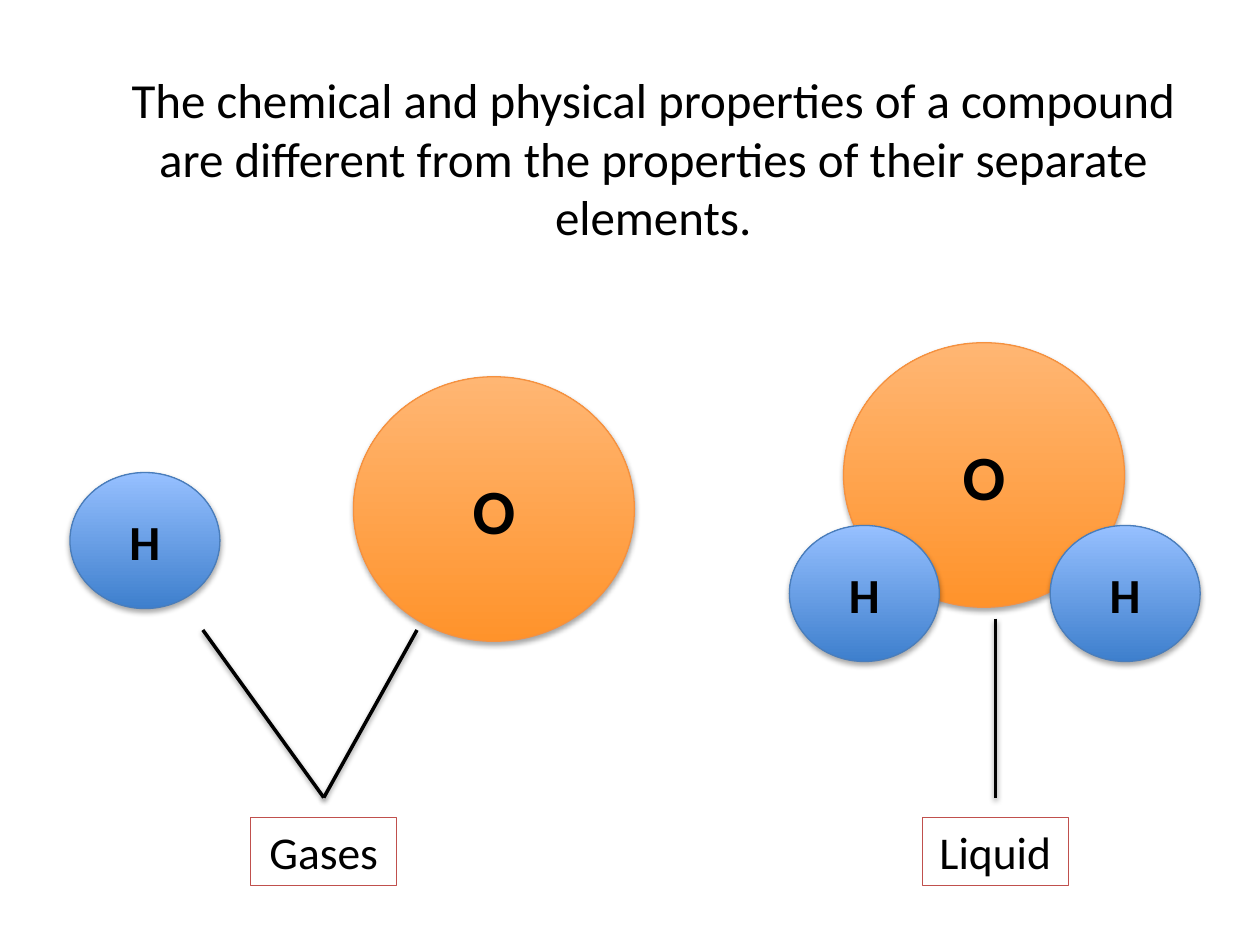
from dataclasses import dataclass

from pptx import Presentation
from pptx import util as u
from pptx.dml.color import RGBColor
from pptx.enum import shapes, text
from pptx.oxml import parse_xml
from pptx.oxml.ns import nsdecls


@dataclass(frozen=True)
class Theme:
    font: str = "Calibri"
    ink: str = "000000"
    frame: str = "C0504D"
    title_size: int = 28
    label_size: int = 26
    thin: float = 0.75
    thick: float = 2


@dataclass(frozen=True)
class Atom:
    symbol: str
    width: float
    height: float
    size: int
    bottom: str
    top: str
    edge: str


HYDROGEN = Atom("H", 11.9, 10.8, 28, "3E7FCD", "96C0FF", "4A7DBA")
OXYGEN = Atom("O", 22.3, 21, 36, "FF932B", "FFB673", "F5913F")


class Deck:
    COLS = 100
    ROWS = 75

    def __init__(self, theme):
        self.theme = theme
        self.prs = Presentation()
        self.prs.slide_width, self.prs.slide_height = u.Inches(10), u.Inches(7.5)
        self.s = self.prs.slides.add_slide(self.prs.slide_layouts[5])

    def x(self, cols):
        return u.Emu(int(self.prs.slide_width * cols / self.COLS))

    def y(self, rows):
        return u.Emu(int(self.prs.slide_height * rows / self.ROWS))

    def box(self, left, top, width, height):
        return self.x(left), self.y(top), self.x(width), self.y(height)

    def set_text(self, sp, words, size, bold=False, anchor=text.MSO_ANCHOR.MIDDLE):
        tf = sp.text_frame
        frame = {"word_wrap": True, "auto_size": text.MSO_AUTO_SIZE.NONE,
                 "vertical_anchor": anchor}
        for name, value in frame.items():
            setattr(tf, name, value)
        p = tf.paragraphs[0]
        p.alignment = text.PP_ALIGN.CENTER
        r = p.add_run()
        r.text = words
        style = {"name": self.theme.font, "size": u.Pt(size), "bold": bold}
        for name, value in style.items():
            setattr(r.font, name, value)
        r.font.color.rgb = RGBColor.from_string(self.theme.ink)

    def outline(self, sp, color, width):
        sp.line.color.rgb = RGBColor.from_string(color)
        sp.line.width = u.Pt(width)

    def shadow(self, sp, opacity, distance):
        sp._element.spPr.append(parse_xml(
            f'<a:effectLst {nsdecls("a")}>'
            f'<a:outerShdw blurRad="40000" dist="{distance}" dir="5400000" rotWithShape="0">'
            f'<a:srgbClr val="000000"><a:alpha val="{opacity * 1000}"/></a:srgbClr>'
            '</a:outerShdw></a:effectLst>'))

    def title(self, words, *place):
        sp = self.s.shapes.title
        sp.left, sp.top, sp.width, sp.height = self.box(*place)
        self.set_text(sp, words, self.theme.title_size, anchor=text.MSO_ANCHOR.TOP)

    def atom(self, kind, center, middle):
        place = self.box(center - kind.width / 2, middle - kind.height / 2,
                         kind.width, kind.height)
        sp = self.s.shapes.add_shape(shapes.MSO_SHAPE.OVAL, *place)
        sp.fill.gradient()
        sp.fill.gradient_angle = 90
        for stop, color, position in zip(sp.fill.gradient_stops,
                                         (kind.bottom, kind.top), (0, 1)):
            stop.color.rgb = RGBColor.from_string(color)
            stop.position = position
        self.outline(sp, kind.edge, self.theme.thin)
        self.shadow(sp, 35, 23000)
        self.set_text(sp, kind.symbol, kind.size, bold=True)

    def line(self, x1, y1, x2, y2):
        sp = self.s.shapes.add_connector(shapes.MSO_CONNECTOR.STRAIGHT, self.x(x1),
                                         self.y(y1), self.x(x2), self.y(y2))
        self.outline(sp, self.theme.ink, self.theme.thick)
        self.shadow(sp, 38, 20000)

    def label(self, words, center):
        place = self.box(center - 5.8, 64.9, 11.6, 5.4)
        sp = self.s.shapes.add_shape(shapes.MSO_SHAPE.RECTANGLE, *place)
        sp.shadow.inherit = False
        sp.fill.background()
        self.outline(sp, self.theme.frame, self.theme.thin)
        self.set_text(sp, words, self.theme.label_size)


def main():
    deck = Deck(Theme())
    deck.title("The chemical and physical properties of a compound are different "
               "from the properties of their separate elements.", 8, 5, 87.7, 15.2)
    for kind, center, middle in ((OXYGEN, 78.1, 37.7), (HYDROGEN, 68.6, 47.1),
                                 (HYDROGEN, 89.3, 47.1), (OXYGEN, 39.2, 40.4),
                                 (HYDROGEN, 11.5, 42.9)):
        deck.atom(kind, center, middle)
    for x1, y1, x2 in ((16.1, 50, 25.7), (33.1, 50, 25.7), (79, 49.1, 79)):
        deck.line(x1, y1, x2, 63.3)
    for words, center in (("Gases", 25.7), ("Liquid", 79)):
        deck.label(words, center)
    deck.prs.save("out.pptx")


if __name__ == "__main__":
    main()
